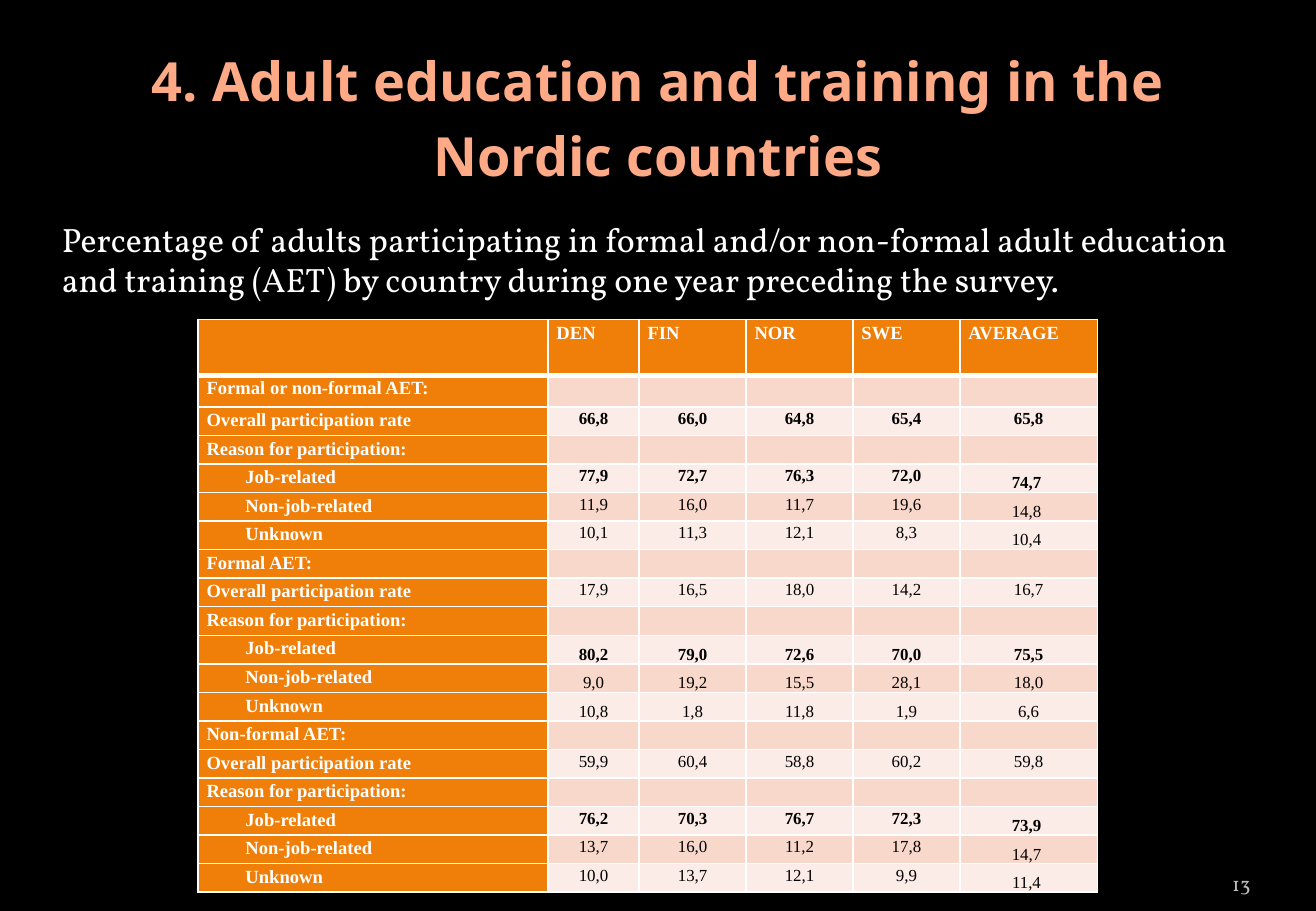
from lxml import etree
from pptx import Presentation
from pptx.dml.color import RGBColor
from pptx.enum import text
from pptx.oxml.ns import qn
from pptx.util import Inches, Pt

# Content
TITLE = "4. Adult education and training in the Nordic countries"
INTRO = ("Percentage of adults participating in formal and/or non-formal adult "
         "education and training (AET) by country during one year preceding the survey.")
PAGE = "13"
HEADER = ["", "DEN", "FIN", "NOR", "SWE", "AVERAGE"]
OVERALL = "Overall participation rate"
REASON = "Reason for participation: "
REASONS = ["Job-related ", "Non-job-related ", "Unknown"]
# heading, overall label, overall rates, rates by reason, values set low, overall in bold
SECTIONS = [
    ("Formal or non-formal AET:", OVERALL + " ",
     ["66,8", "66,0", "64,8", "65,4", "65,8"],
     [["77,9", "72,7", "76,3", "72,0", "74,7 "],
      ["11,9", "16,0", "11,7", "19,6", "14,8 "],
      ["10,1", "11,3", "12,1", "8,3", "10,4 "]], False, True),
    ("Formal AET:", OVERALL,
     ["17,9", "16,5", "18,0", "14,2", "16,7"],
     [["80,2", "79,0", "72,6", "70,0", "75,5"],
      ["9,0", "19,2", "15,5", "28,1", "18,0"],
      ["10,8", "1,8", "11,8", "1,9", "6,6"]], True, False),
    ("Non-formal AET:", OVERALL,
     ["59,9", "60,4", "58,8", "60,2", "59,8"],
     [["76,2", "70,3", "76,7", "72,3", "73,9 "],
      ["13,7", "16,0", "11,2", "17,8", "14,7 "],
      ["10,0", "13,7", "12,1", "9,9", "11,4 "]], False, False),
]

THEME = {
    "bg": "000000", "title": "FFAA86", "white": "FFFFFF", "page": "BDBDBD",
    "orange": "F07F09", "bands": ("FCECE7", "F9D8CC"), "ink": "000000",
    "title_font": "Noto Sans", "body_font": "Vollkorn", "table_font": "Times New Roman",
    "title_pt": 32, "body_pt": 20, "page_pt": 12, "label_pt": 11, "value_pt": 10,
}

# Layout, in inches
TABLE_LEFT, TABLE_TOP, TABLE_HEIGHT = 1.63, 2.63, 4.72
COL_WIDTHS = [2.88, 0.75, 0.88, 0.88, 0.88, 1.13]
TOP_ROWS = [0.46, 0.26]
ALIGN, ANCHOR = text.PP_ALIGN, text.MSO_ANCHOR


def color(name):
    return RGBColor.from_string(name)


def add_run(p, words, font, size, ink, bold=False):
    r = p.add_run()
    r.text = words
    r.font.name, r.font.size, r.font.bold = font, Pt(size), bold
    r.font.color.rgb = color(ink)


def add_text(slide, box, words, font, size, ink, align, anchor, bold=False, side=0.1):
    tf = slide.shapes.add_textbox(*map(Inches, box)).text_frame
    tf.word_wrap = True
    tf.vertical_anchor = anchor
    tf.margin_left = tf.margin_right = Inches(side)
    p = tf.paragraphs[0]
    p.alignment = align
    add_run(p, words, font, size, ink, bold)
    return p


def set_borders(cell, row):
    widths = {"lnL": 1, "lnR": 1, "lnT": 3 if row == 1 else 1, "lnB": 3 if row == 0 else 1}
    tc_pr = cell._tc.get_or_add_tcPr()
    for i, (side, width) in enumerate(widths.items()):
        ln = etree.Element(qn("a:" + side), w=str(Pt(width)))
        fill = etree.SubElement(ln, qn("a:solidFill"))
        etree.SubElement(fill, qn("a:srgbClr"), val=THEME["white"])
        tc_pr.insert(i, ln)


def table_rows():
    """Yield (texts, is_reason, bold_values, columns set at the bottom)."""
    yield HEADER, False, True, ()
    empty = [""] * 5
    for heading, label, overall, by_reason, low, bold in SECTIONS:
        yield [heading] + empty, False, False, ()
        yield [label] + overall, False, bold, ()
        yield [REASON] + empty, False, False, ()
        for i, (reason, values) in enumerate(zip(REASONS, by_reason)):
            yield [reason] + values, True, i == 0, range(1, 6) if low else (5,)


def fill_cell(cell, words, row, col, is_reason, bold, low):
    is_label = row == 0 or col == 0
    size = THEME["label_pt" if is_label else "value_pt"]
    cell.margin_left = cell.margin_right = Inches(0.07)
    cell.margin_top = cell.margin_bottom = 0
    cell.vertical_anchor = ANCHOR.BOTTOM if low else ANCHOR.TOP
    cell.fill.solid()
    cell.fill.fore_color.rgb = color(THEME["orange"] if is_label else THEME["bands"][row % 2])
    set_borders(cell, row)
    p = cell.text_frame.paragraphs[0]
    p.alignment = ALIGN.JUSTIFY if is_label else ALIGN.CENTER
    p.line_spacing = 1.15
    if is_reason and col == 0:
        p._p.get_or_add_pPr().set("marL", str(Inches(0.32)))
    if words:
        add_run(p, words, THEME["table_font"], size,
                THEME["white" if is_label else "ink"], is_label or bold)
    else:
        etree.SubElement(p._p, qn("a:endParaRPr"), sz=str(size * 100))


def add_rates_table(slide):
    rows = list(table_rows())
    rest = len(rows) - len(TOP_ROWS)
    heights = TOP_ROWS + [(TABLE_HEIGHT - sum(TOP_ROWS)) / rest] * rest
    table = slide.shapes.add_table(
        len(rows), len(COL_WIDTHS), Inches(TABLE_LEFT), Inches(TABLE_TOP),
        Inches(sum(COL_WIDTHS)), Inches(TABLE_HEIGHT)).table
    table.horz_banding = False
    for column, width in zip(table.columns, COL_WIDTHS):
        column.width = Inches(width)
    for i, (texts, is_reason, bold, low_cols) in enumerate(rows):
        table.rows[i].height = Inches(heights[i])
        for j, words in enumerate(texts):
            fill_cell(table.cell(i, j), words, i, j, is_reason, bold, j in low_cols)


def main():
    prs = Presentation()
    prs.slide_width, prs.slide_height = Inches(10.83), Inches(7.5)
    slide = prs.slides.add_slide(prs.slide_layouts[6])
    slide.background.fill.solid()
    slide.background.fill.fore_color.rgb = color(THEME["bg"])

    # Title
    p = add_text(slide, (0.54, 0.3, 9.75, 1.25), TITLE, THEME["title_font"],
                 THEME["title_pt"], THEME["title"], ALIGN.CENTER, ANCHOR.MIDDLE, bold=True)
    p.line_spacing = 1.15

    # Introduction
    p = add_text(slide, (0.26, 1.75, 10.39, 5.15), INTRO, THEME["body_font"],
                 THEME["body_pt"], THEME["white"], ALIGN.LEFT, ANCHOR.TOP)
    p.space_before = Pt(4)
    p._p.get_or_add_pPr().set("marL", str(Inches(0.15)))

    # Page number
    add_text(slide, (9.39, 7.02, 0.9, 0.4), PAGE, THEME["body_font"],
             THEME["page_pt"], THEME["page"], ALIGN.RIGHT, ANCHOR.BOTTOM, side=0)

    # Participation rates
    add_rates_table(slide)
    prs.save("out.pptx")


if __name__ == "__main__":
    main()
